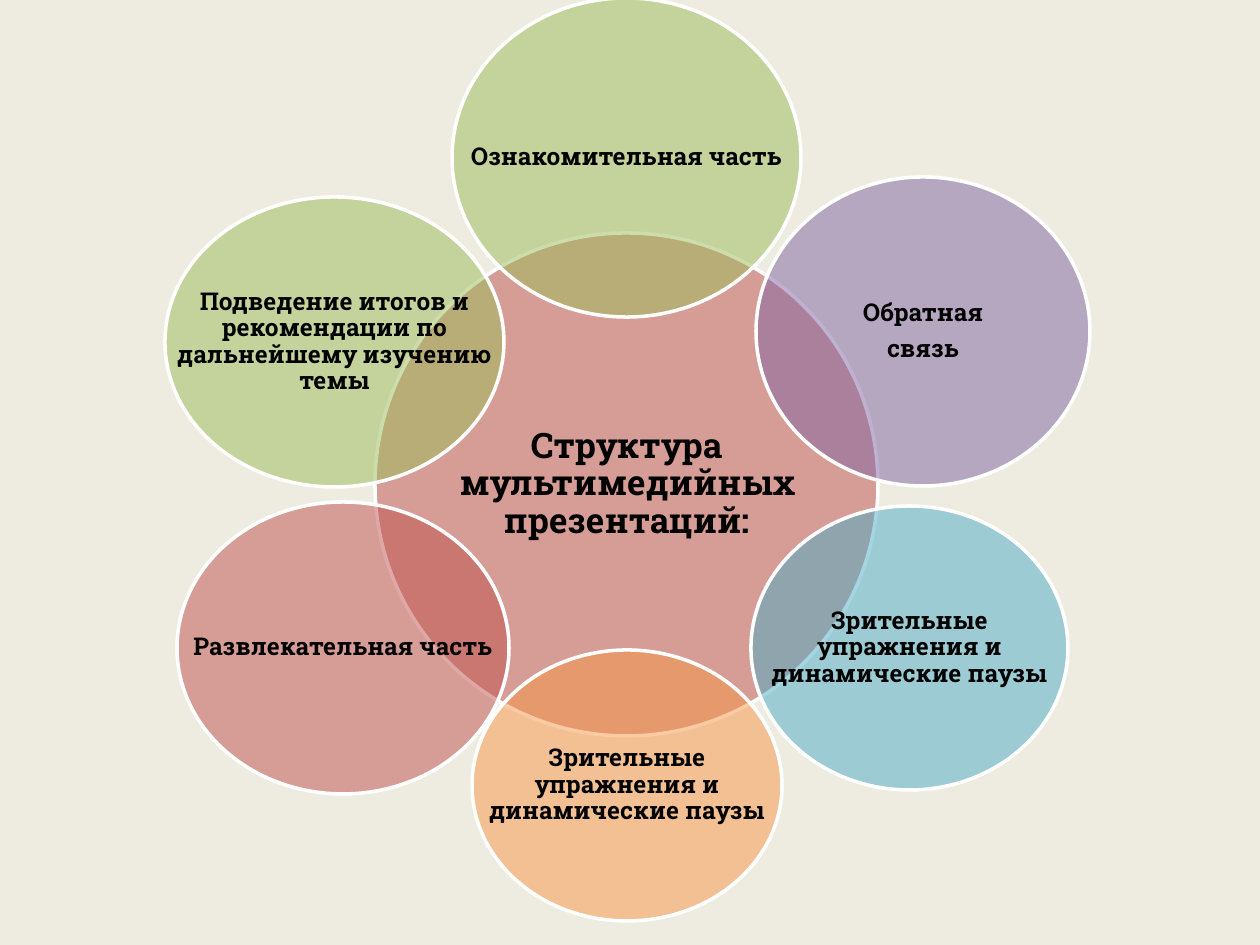
from lxml import etree
from pptx import Presentation
from pptx import util as u
from pptx.dml.color import RGBColor
from pptx.enum import shapes, text
from pptx.oxml.ns import qn

PX = 914400 / 126
COLORS = {
    "bg": "EEECE1", "line": "FFFFFF", "text": "000000",
    "red": "C0504D", "green": "9BBB59", "purple": "8064A2",
    "teal": "4BACC6", "orange": "F79646",
}
FONT = "Roboto Slab"
PAUSES = ["Зрительные упражнения и динамические паузы"]
CIRCLES = [
    (375, 233, 503, 503, "red", 20, ["Структура мультимедийных презентаций:"]),
    (452, -2, 349, 319, "green", 14, ["Ознакомительная часть"]),
    (756, 177, 334, 309, "purple", 14, ["Обратная", "связь"]),
    (751, 506, 317, 284, "teal", 14, PAUSES),
    (472, 650, 310, 271, "orange", 14, PAUSES),
    (177, 502, 332, 292, "red", 14, ["Развлекательная часть"]),
    (165, 197, 339, 290, "green", 14,
     ["Подведение итогов и рекомендации по дальнейшему изучению темы"]),
]


def px(n):
    return u.Emu(round(n * PX))


def rgb(name):
    return RGBColor.from_string(COLORS[name])


prs = Presentation()
prs.slide_width, prs.slide_height = px(1260), px(945)
s = prs.slides.add_slide(prs.slide_layouts[6])
s.background.fill.solid()
s.background.fill.fore_color.rgb = rgb("bg")

for x, y, w, h, color, size, lines in CIRCLES:
    box = px(x), px(y), px(w), px(h)
    sp = s.shapes.add_shape(shapes.MSO_SHAPE.OVAL, *box)
    sp.shadow.inherit = False
    sp.fill.solid()
    sp.fill.fore_color.rgb = rgb(color)
    clr = sp.fill._xPr.find(qn("a:solidFill"))[0]
    etree.SubElement(clr, qn("a:alpha"), val="50000")
    sp.line.color.rgb = rgb("line")
    sp.line.width = u.Pt(2)

    tf = s.shapes.add_textbox(*box).text_frame
    tf.word_wrap = True
    tf.vertical_anchor = text.MSO_ANCHOR.MIDDLE
    tf.margin_left = tf.margin_right = tf.margin_top = tf.margin_bottom = px(3)
    for i, line in enumerate(lines):
        p = tf.add_paragraph() if i else tf.paragraphs[0]
        p.alignment = text.PP_ALIGN.CENTER
        p.line_spacing = 0.9
        p.space_after = u.Pt(round(size * 0.35))
        r = p.add_run()
        r.text = line
        r.font.name = FONT
        r.font.size = u.Pt(size)
        r.font.bold = True
        r.font.color.rgb = rgb("text")

prs.save("out.pptx")
